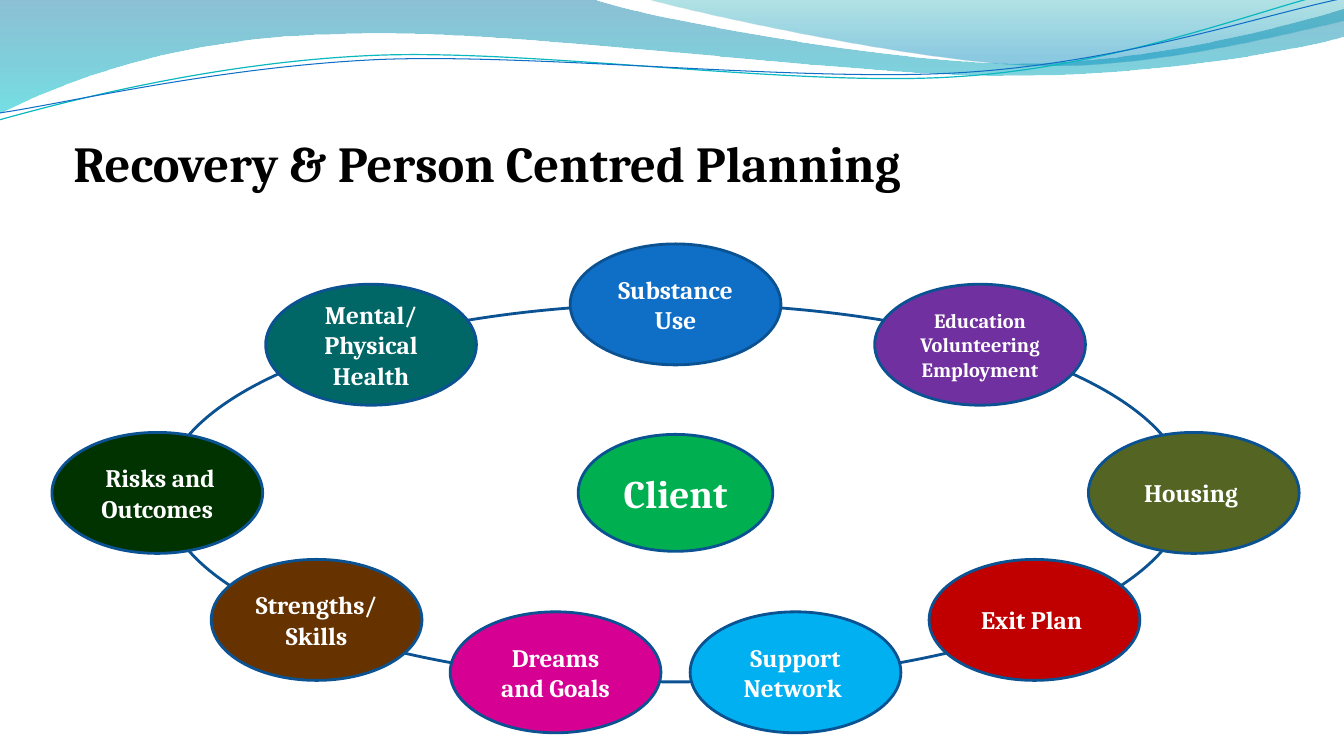
import pptx
import pptx.dml.color
import pptx.enum.shapes
import pptx.enum.text
import pptx.oxml
import pptx.oxml.ns
import pptx.util
from pptx.oxml.ns import qn
from pptx.util import Inches

# Content
TITLE = "Recovery & Person Centred Planning"
CENTRE = ("Client", "00B050")
TOP_NODE = ("Substance Use", "0F6FC6")
# Mirrored rows: distance of node centres from the axis, top, left node, right node
ROWS = [
    (3.02, 2.82, ("Mental/\nPhysical Health", "006666"),
     ("Education\nVolunteering\nEmployment", "7030A0")),
    (5.14, 4.29, (" Risks and Outcomes", "003300"), ("Housing ", "546422")),
    (3.56, 5.55, ("Strengths/ Skills", "663300"), ("Exit Plan ", "C00000")),
    (1.19, 6.07, ("Dreams and Goals", "D60093"), ("Support Network ", "00B0F0")),
]

THEME = {
    "font": "Cambria", "title": "000000", "label": "FFFFFF", "outline": "0B5292",
    "title_size": 36, "centre_size": 28, "label_size": 18, "small_size": 14.5,
    "outline_width": 2,
}

# Header bands and waves: start, then lines (one point) or cubic curves (three points)
BANDS = [
    ((0, 0),
     [[(5.87, -0.01)],
      [(6.34, 0.17), (8.85, 0.63), (10.11, 0.63)],
      [(11.38, 0.63), (12.78, 0.26), (13.33, 0.09)],
      [(13.35, 0.36)],
      [(13.11, 0.44), (11.6, 0.76), (9.94, 0.75)],
      [(8.29, 0.75), (5.09, 0.28), (3.43, 0.34)],
      [(1.72, 0.36), (0.61, 0.83), (-0.01, 1.13)],
      [(0, 0)]],
     [(0, "0074A1", 45), (100, "00C6CF", 55)]),
    ((6.39, -0.01),
     [[(6.79, 0.11), (9.09, 0.62), (10.25, 0.65)],
      [(11.41, 0.69), (12.82, 0.32), (13.33, 0.21)],
      [(13.33, 0)],
      [(6.39, -0.01)]],
     [(0, "00A1A9", 30), (80, "008BBF", 45)]),
]
WAVES = [
    ((-0.01, 1.19),
     [[(0.64, 1.01), (2.11, 0.62), (3.69, 0.55)],
      [(5.27, 0.48), (7.9, 0.87), (9.5, 0.76)],
      [(11.1, 0.66), (12.52, 0.08), (13.31, -0.1)]], "0AB8BF", 0.85),
    ((0, 1.12),
     [[(0.63, 1.03), (2.18, 0.66), (3.78, 0.59)],
      [(5.37, 0.53), (7.96, 0.82), (9.55, 0.72)],
      [(11.15, 0.62), (12.55, 0.14), (13.34, -0.02)]], "0F6FC6", 0.75),
]

# Layout
AXIS_X, RING_Y = 6.70, 4.89
RING_SIZE, NODE_SIZE, CENTRE_SIZE = (10.14, 3.75), (2.09, 1.2), (1.93, 1.16)


def rgb(value):
    return pptx.dml.color.RGBColor.from_string(value)


def write(s, text, size, color, align=None, anchor=None):
    tf = s.text_frame
    tf.word_wrap = True
    tf.vertical_anchor = anchor
    for i, line in enumerate(text.split("\n")):
        p = tf.paragraphs[0] if i == 0 else tf.add_paragraph()
        p.alignment = align
        r = p.add_run()
        r.text = line
        r.font.name, r.font.bold = THEME["font"], True
        r.font.size = pptx.util.Pt(size)
        r.font.color.rgb = rgb(color)


def set_line(s, color, width):
    s.line.color.rgb = rgb(color)
    s.line.width = pptx.util.Pt(width)


def set_gradient(s, stops):
    stop_xml = "".join(
        f'<a:gs pos="{pos * 1000}"><a:srgbClr val="{color}">'
        f'<a:alpha val="{alpha * 1000}"/></a:srgbClr></a:gs>'
        for pos, color, alpha in stops)
    grad = pptx.oxml.parse_xml(
        f'<a:gradFill {pptx.oxml.ns.nsdecls("a")} rotWithShape="1"><a:gsLst>{stop_xml}'
        '</a:gsLst><a:lin ang="5400000" scaled="0"/></a:gradFill>')
    s.fill.background()
    blank = s._element.spPr.find(qn("a:noFill"))
    blank.getparent().replace(blank, grad)


def add_outline(slide, start, steps, close):
    builder = slide.shapes.build_freeform(Inches(start[0]), Inches(start[1]), scale=1.0)
    builder.add_line_segments(
        [(Inches(x), Inches(y)) for step in steps for x, y in step], close=close)
    s = builder.convert_to_shape()
    s.shadow.inherit = False
    # Join each three points of a curve into one cubic segment
    segments = iter(list(s._element.iter(qn("a:lnTo"))))
    for step in steps:
        first, *others = [next(segments) for _ in step]
        if others:
            curve = first.makeelement(qn("a:cubicBezTo"))
            first.addprevious(curve)
            for segment in (first, *others):
                curve.append(segment[0])
                segment.getparent().remove(segment)
    return s


def add_ellipse(slide, center, size, fill=None):
    (x, y), (w, h) = center, size
    s = slide.shapes.add_shape(
        pptx.enum.shapes.MSO_SHAPE.OVAL,
        Inches(x - w / 2), Inches(y - h / 2), Inches(w), Inches(h))
    s.shadow.inherit = False
    set_line(s, THEME["outline"], THEME["outline_width"])
    if fill:
        s.fill.solid()
        s.fill.fore_color.rgb = rgb(fill)
    else:
        s.fill.background()
    return s


def add_node(slide, node, center, dims=NODE_SIZE, size=None):
    text, fill = node
    if size is None:
        size = THEME["small_size" if text.count("\n") > 1 else "label_size"]
    write(add_ellipse(slide, center, dims, fill), text, size, THEME["label"],
          align=pptx.enum.text.PP_ALIGN.CENTER,
          anchor=pptx.enum.text.MSO_ANCHOR.MIDDLE)


def main():
    prs = pptx.Presentation()
    prs.slide_width, prs.slide_height = Inches(13.33), Inches(7.5)
    slide = prs.slides.add_slide(prs.slide_layouts[6])

    # Header
    for start, steps, stops in BANDS:
        s = add_outline(slide, start, steps, True)
        set_gradient(s, stops)
        s.line.fill.background()
    for start, steps, color, width in WAVES:
        s = add_outline(slide, start, steps, False)
        s.fill.background()
        set_line(s, color, width)

    # Title
    box = slide.shapes.add_textbox(Inches(0.63), Inches(1.26), Inches(12.16), Inches(0.71))
    write(box, TITLE, THEME["title_size"], THEME["title"])

    # Ring, centre and surrounding nodes
    add_ellipse(slide, (AXIS_X, RING_Y), RING_SIZE)
    add_node(slide, CENTRE, (AXIS_X, RING_Y), CENTRE_SIZE, THEME["centre_size"])
    half = NODE_SIZE[1] / 2
    add_node(slide, TOP_NODE, (AXIS_X, 2.42 + half))
    for dx, top, left, right in ROWS:
        add_node(slide, left, (AXIS_X - dx, top + half))
        add_node(slide, right, (AXIS_X + dx, top + half))

    prs.save("out.pptx")


if __name__ == "__main__":
    main()
